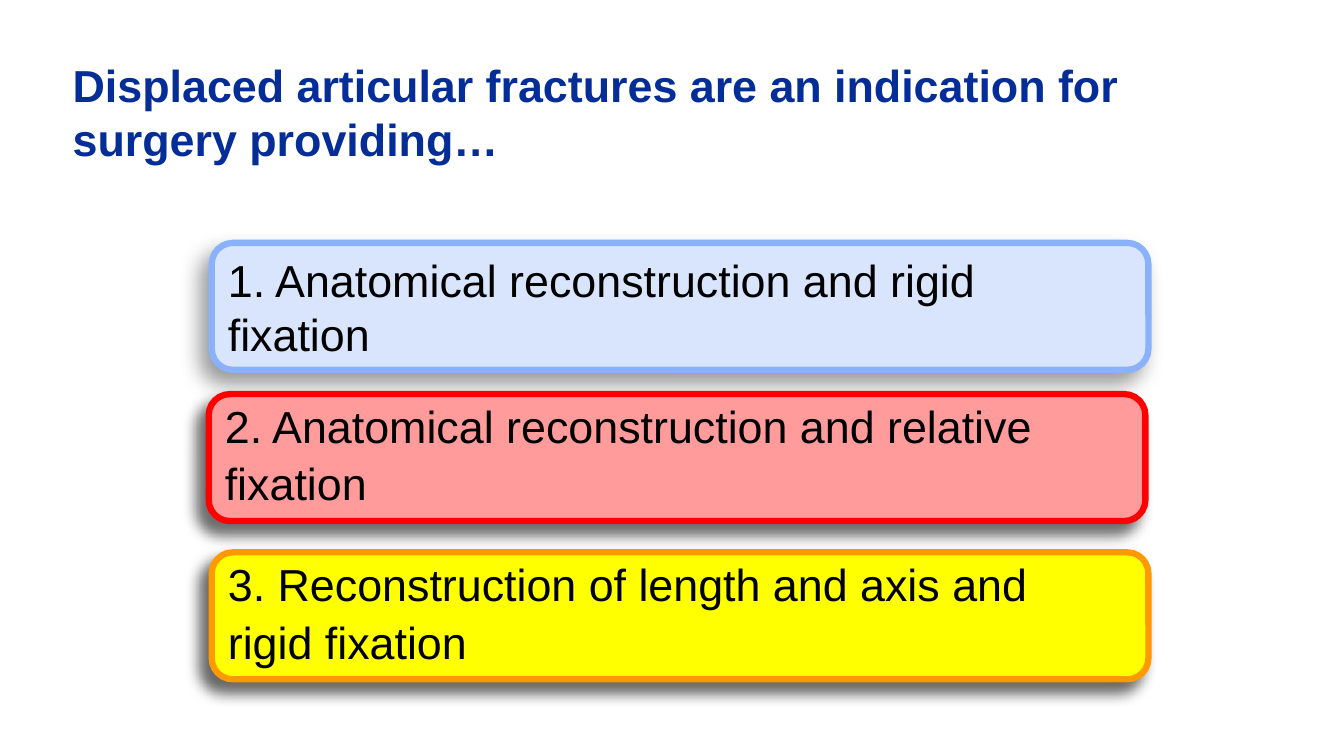
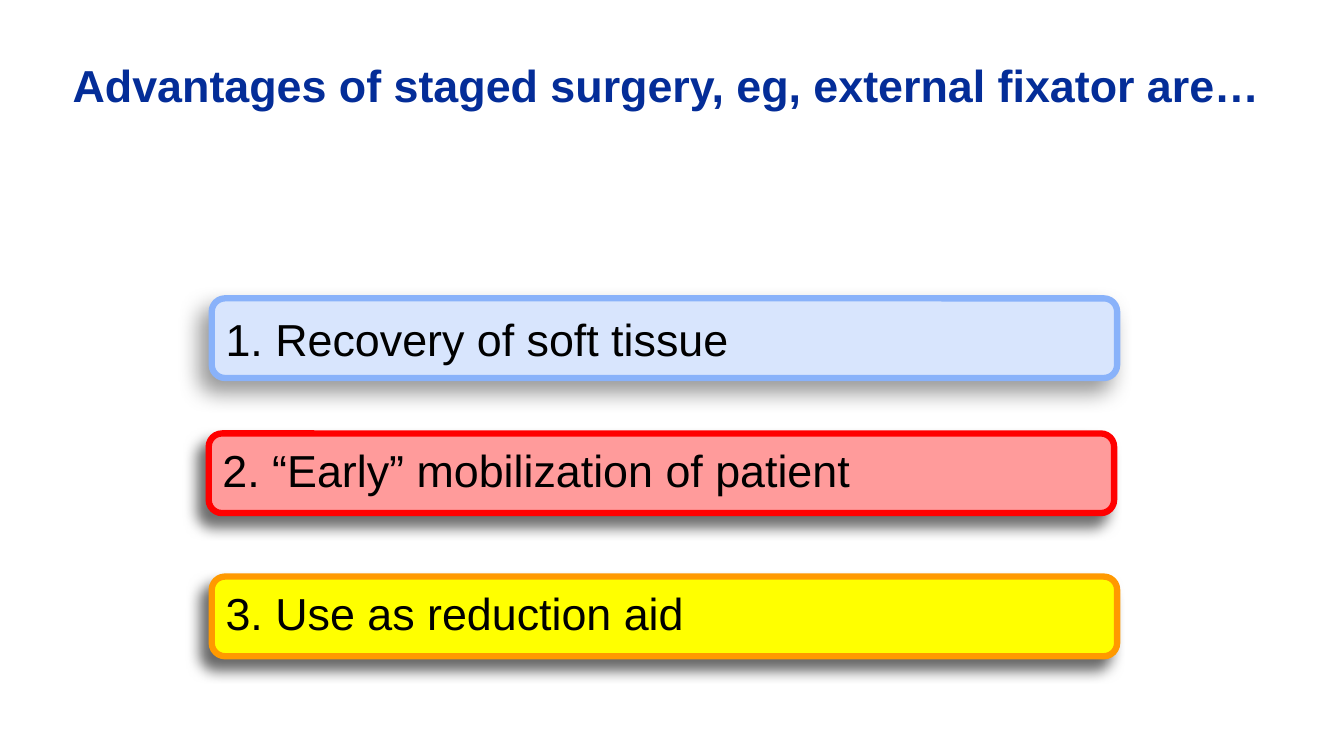
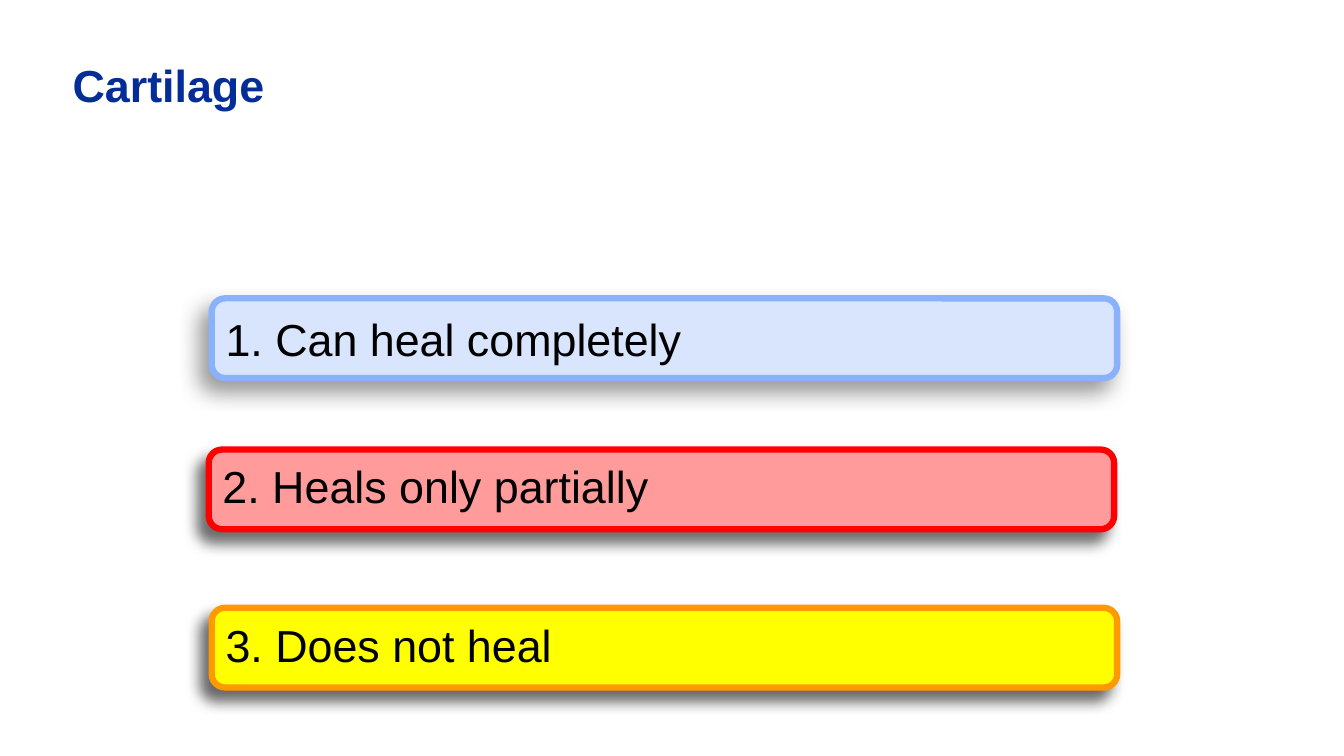
from dataclasses import dataclass

from lxml.etree import SubElement
from pptx import Presentation
from pptx.dml.color import RGBColor
from pptx.enum.shapes import MSO_SHAPE as Shape
from pptx.enum.text import MSO_ANCHOR as Anchor, MSO_AUTO_SIZE as AutoSize, PP_ALIGN as Align
from pptx.oxml.ns import qn
from pptx.util import Inches, Pt

FONT = "Arial"
TEXT_SIZE = 32
TITLE_COLOUR = "042D98"
TEXT_COLOUR = "000000"


@dataclass
class AnswerStyle:
    left: float
    fill: str
    border: str
    shadow_opacity: int
    shadow_blur: int
    line_spacing: float
    paragraph_gap: float


ANSWER_STYLES = [
    AnswerStyle(2.1, "D8E5FD", "89B2FA", 40, 15, 1.0, 0),
    AnswerStyle(2.07, "FF9B9B", "FF0000", 56, 10, 0.9, 6.4),
    AnswerStyle(2.1, "FFFF00", "FF9900", 58, 10, 0.9, 6.4),
]

# Title, answer box size, then the top and the lines of each answer
QUESTIONS = [
    ("Displaced articular fractures are an indication for surgery providing…", (9.29, 1.26), [
        (2.41, ["1. Anatomical reconstruction and rigid", "fixation"]),
        (3.91, ["2. Anatomical reconstruction and relative", "fixation"]),
        (5.48, ["3. Reconstruction of length and axis and", "rigid fixation"]),
    ]),
    ("Advantages of staged surgery, eg, external fixator are…", (8.98, 0.79), [
        (2.96, ["1. Recovery of soft tissue"]),
        (4.3, ["2. “Early” mobilization of patient"]),
        (5.72, ["3. Use as reduction aid"]),
    ]),
    ("Cartilage", (8.98, 0.79), [
        (2.96, ["1. Can heal completely"]),
        (4.46, ["2. Heals only partially"]),
        (6.03, ["3. Does not heal"]),
    ]),
]


def rgb(colour):
    return RGBColor.from_string(colour)


def add_run(paragraph, text, colour, bold=False):
    paragraph.alignment = Align.LEFT
    run = paragraph.add_run()
    run.text = text
    run.font.name = FONT
    run.font.size = Pt(TEXT_SIZE)
    run.font.bold = bold
    run.font.color.rgb = rgb(colour)


def set_title(slide, text):
    title = slide.shapes.title
    title.left, title.top = Inches(0.72), Inches(0.57)
    title.width, title.height = Inches(11.89), Inches(1.06)
    frame = title.text_frame
    frame.margin_left = frame.margin_top = frame.margin_right = frame.margin_bottom = 0
    frame.vertical_anchor = Anchor.TOP
    frame.auto_size = AutoSize.NONE
    frame.word_wrap = True
    add_run(frame.paragraphs[0], text, TITLE_COLOUR, bold=True)


def add_shadow(shape, opacity, blur, distance=10, angle=135):
    """Cast a black shadow: opacity in percent, blur and distance in points."""
    shape.shadow.inherit = False
    effects = shape._element.spPr.find(qn("a:effectLst"))
    shadow = SubElement(effects, qn("a:outerShdw"), blurRad=str(Pt(blur)), dist=str(Pt(distance)),
                        dir=str(angle * 60000), algn="ctr", rotWithShape="0")
    black = SubElement(shadow, qn("a:srgbClr"), val="000000")
    SubElement(black, qn("a:alpha"), val=str(opacity * 1000))


def add_answer(slide, style, top, size, lines):
    width, height = size
    box = slide.shapes.add_shape(Shape.ROUNDED_RECTANGLE, Inches(style.left), Inches(top),
                                 Inches(width), Inches(height))
    box.fill.solid()
    box.fill.fore_color.rgb = rgb(style.fill)
    box.line.color.rgb = rgb(style.border)
    box.line.width = Pt(4.5)
    add_shadow(box, style.shadow_opacity, style.shadow_blur)

    frame = box.text_frame
    frame.word_wrap = True
    frame.vertical_anchor = Anchor.MIDDLE
    for index, line in enumerate(lines):
        paragraph = frame.add_paragraph() if index else frame.paragraphs[0]
        paragraph.line_spacing = style.line_spacing
        if index:
            paragraph.space_before = Pt(style.paragraph_gap)
        add_run(paragraph, line, TEXT_COLOUR)


def main():
    deck = Presentation()
    deck.slide_width, deck.slide_height = Inches(13.33), Inches(7.5)
    title_only = deck.slide_layouts[5]
    for title, size, answers in QUESTIONS:
        slide = deck.slides.add_slide(title_only)
        set_title(slide, title)
        for style, (top, lines) in zip(ANSWER_STYLES, answers):
            add_answer(slide, style, top, size, lines)
    deck.save("out.pptx")


if __name__ == "__main__":
    main()
